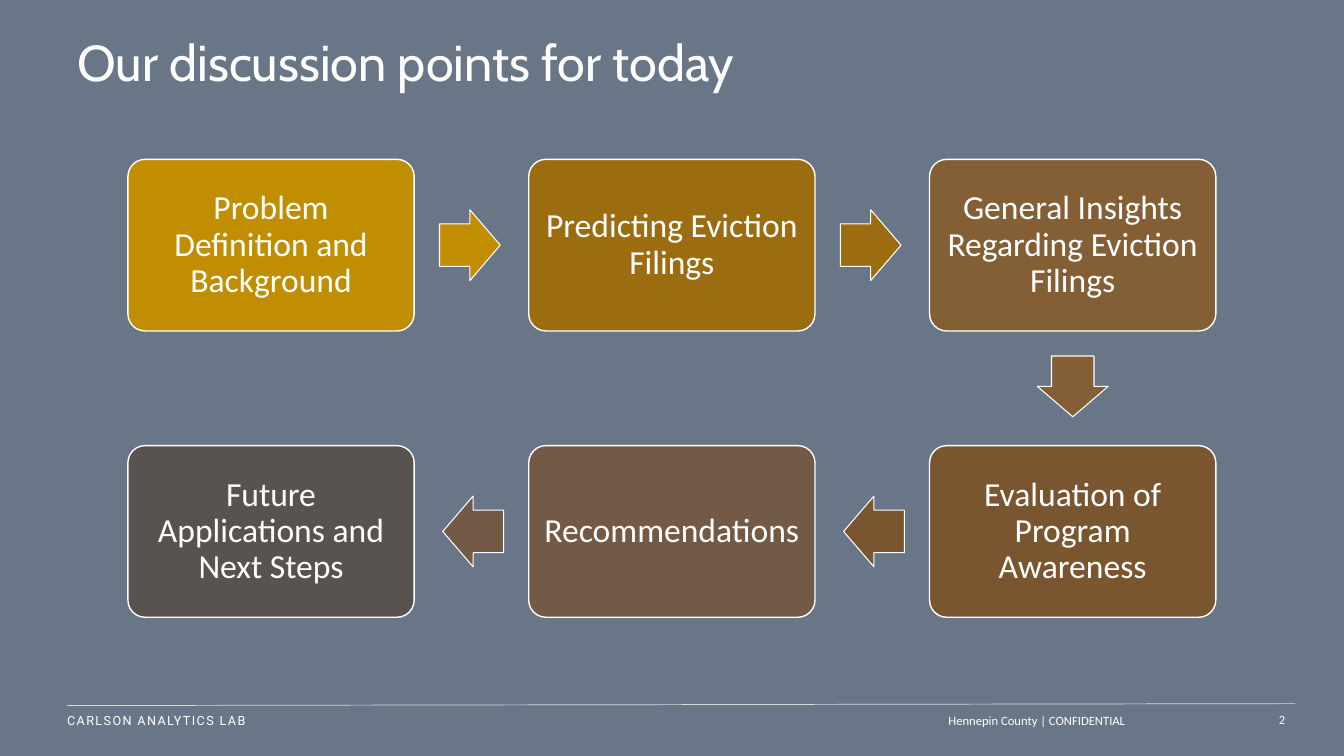
from pptx import Presentation
from pptx.dml.color import RGBColor
from pptx.enum import shapes, text
from pptx.oxml import xmlchemy
from pptx.util import Pt
from lxml import etree
from pptx.oxml import ns

WHITE = "FFFFFF"
BACKGROUND = "697688"
TITLE = "Our discussion points for today"
TOPICS = [
    ("Problem Definition and Background", "C08E00", 0, 0, "right"),
    ("Predicting Eviction Filings", "9C6D10", 1, 0, "right"),
    ("General Insights Regarding Eviction Filings", "845E34", 2, 0, "down"),
    ("Evaluation of Program Awareness", "79562F", 2, 1, "left"),
    ("Recommendations", "725A46", 1, 1, "left"),
    ("Future Applications and Next Steps", "59534F", 0, 1, None),
]
FOOTERS = [
    ("CARLSON ANALYTICS LAB", "Roboto", "LEFT", (48, 502.6, 233, 23.8), 0, 100),
    ("Hennepin County | CONFIDENTIAL", "Calibri", "RIGHT", (383, 503.3, 427.7, 23), 7.2, 0),
    ("2", "Calibri", "RIGHT", (892.8, 502.6, 32.4, 23), 0, 0),
]
DIRECTIONS = {"right": (1, 0, 0), "down": (0, 1, 90), "left": (-1, 0, 180)}

GRID_LEFT, GRID_TOP = 91.4, 113.8
STEP_X, STEP_Y = 286.3, 204.5
BOX_W, BOX_H = 204.5, 122.6
ARROW_W, ARROW_H = 43.4, 50.6
REACH_X, REACH_Y = 142, 100.9


def color(value):
    return RGBColor.from_string(value)


def frame(left, top, width, height):
    return Pt(left), Pt(top), Pt(width), Pt(height)


def write(holder, words, font, size, align, spacing=1.0):
    body = holder.text_frame
    body.text = words
    body.word_wrap = True
    body.auto_size = text.MSO_AUTO_SIZE.NONE
    body.vertical_anchor = text.MSO_ANCHOR.MIDDLE
    paragraph = body.paragraphs[0]
    paragraph.alignment = align
    paragraph.line_spacing = spacing
    run = paragraph.runs[0]
    run.font.name = font
    run.font.size = Pt(size)
    run.font.color.rgb = color(WHITE)
    return run


def add_block(slide, kind, place, fill, line_width, adjustments):
    block = slide.shapes.add_shape(kind, *frame(*place))
    block.shadow.inherit = False
    block.fill.solid()
    block.fill.fore_color.rgb = color(fill)
    block.line.color.rgb = color(WHITE)
    block.line.width = Pt(line_width)
    for index, value in enumerate(adjustments):
        block.adjustments[index] = value
    return block


def add_topic(slide, words, fill, column, row, direction):
    left = GRID_LEFT + column * STEP_X
    top = GRID_TOP + row * STEP_Y
    box = add_block(slide, shapes.MSO_SHAPE.ROUNDED_RECTANGLE,
                    (left, top, BOX_W, BOX_H), fill, 1, [0.1])
    write(box, words, "Calibri", 24, text.PP_ALIGN.CENTER, 0.9)
    body = box.text_frame
    body.margin_left = body.margin_right = Pt(7.2)
    body.margin_top = body.margin_bottom = Pt(7.2)
    if direction:
        dx, dy, angle = DIRECTIONS[direction]
        arrow_left = left + (BOX_W - ARROW_W) / 2 + dx * REACH_X
        arrow_top = top + (BOX_H - ARROW_H) / 2 + dy * REACH_Y
        arrow = add_block(slide, shapes.MSO_SHAPE.RIGHT_ARROW,
                          (arrow_left, arrow_top, ARROW_W, ARROW_H),
                          fill, 0.75, [0.6, 0.5])
        arrow.rotation = angle


def add_footer(slide, words, font, align, place, margin_left, tracking):
    footer = slide.shapes.add_textbox(*frame(*place))
    run = write(footer, words, font, 9, text.PP_ALIGN[align])
    footer.text_frame.margin_left = Pt(margin_left)
    if tracking:
        run._r.get_or_add_rPr().set("spc", str(tracking))


def main():
    deck = Presentation()
    deck.slide_width, deck.slide_height = Pt(960), Pt(540)
    slide = deck.slides.add_slide(deck.slide_layouts[5])
    slide.background.fill.solid()
    slide.background.fill.fore_color.rgb = color(BACKGROUND)

    title = slide.shapes.title
    title.left, title.top, title.width, title.height = frame(48, 27.4, 806.4, 38.9)
    write(title, TITLE, "Cabin", 36, text.PP_ALIGN.LEFT, 0.9)

    rule = slide.shapes.add_connector(shapes.MSO_CONNECTOR.STRAIGHT,
                                      Pt(48), Pt(504), Pt(925.2), Pt(502.6))
    rule.line.color.rgb = color("D9D9D9")
    rule.line.width = Pt(0.5)
    etree.SubElement(rule._element.spPr, ns.qn("a:effectLst"))

    for footer in FOOTERS:
        add_footer(slide, *footer)
    for topic in TOPICS:
        add_topic(slide, *topic)
    deck.save("out.pptx")


if __name__ == "__main__":
    main()
